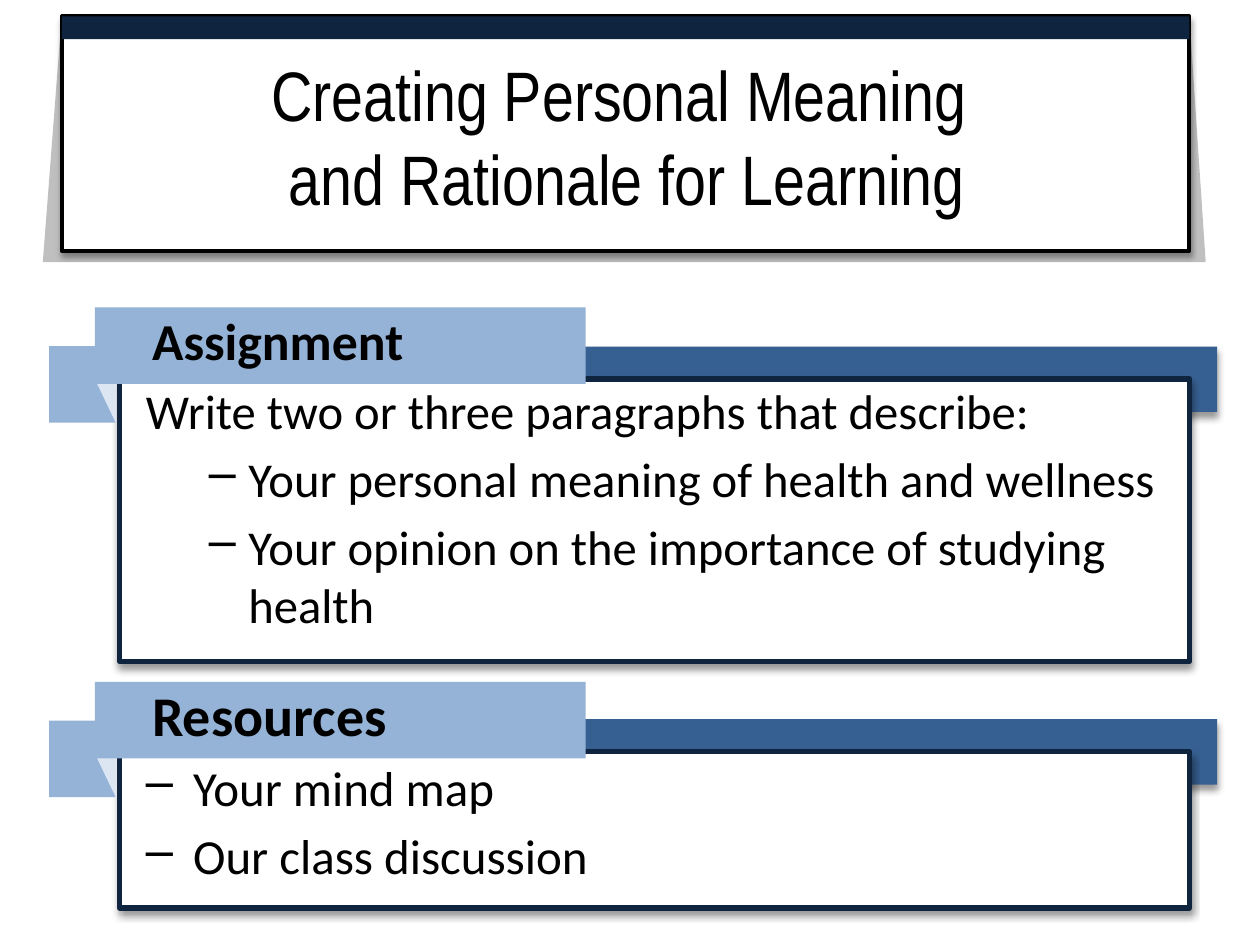
from lxml.etree import SubElement
from pptx import Presentation
from pptx.dml.color import RGBColor
from pptx.enum.shapes import MSO_SHAPE
from pptx.enum.text import MSO_ANCHOR, PP_ALIGN
from pptx.oxml.ns import qn
from pptx.util import Pt

COLORS = {
    "black": "000000", "white": "FFFFFF", "navy": "0F243E", "blue": "376092",
    "light": "95B3D7", "pale": "DCE6F2", "gray": "BFBFBF",
}
TITLE = "Creating Personal Meaning \vand Rationale for Learning"
# Paragraphs: text, size, bold, left margin, first-line indent, bullet
SECTIONS = [
    {
        "top": 175.6, "band": 198, "frame": 161.3, "box": (172.8, 600.5, 211),
        "lines": [
            ("Assignment", 29.6, True, 3.6, 0, None),
            ("Write two or three paragraphs that describe:", 27.8, False, 0, 0, None),
            ("Your personal meaning of health and wellness", 27.8, False, 58.5, -22.5, "–"),
            ("Your opinion on the importance of studying health", 27.8, False, 58.5, -22.5, "–"),
        ],
    },
    {
        "top": 389.6, "band": 411, "frame": 89.3, "box": (385.2, 540, 141),
        "lines": [
            ("Resources", 32, True, 3.6, 0, None),
            ("Your mind map", 28, False, 27, -27, "–"),
            ("Our class discussion", 28, False, 27, -27, "–"),
        ],
    },
]

deck = Presentation()
deck.slide_width, deck.slide_height = Pt(720), Pt(540)
slide = deck.slides.add_slide(deck.slide_layouts[6])
shapes = slide.shapes


def paint(shape, fill, line=None, width=0, shade=None):
    """Set fill, outline and shadow; shade is (opacity %, blur, distance)."""
    shape.shadow.inherit = False
    shape.fill.solid()
    shape.fill.fore_color.rgb = RGBColor.from_string(COLORS[fill])
    if line:
        shape.line.color.rgb = RGBColor.from_string(COLORS[line])
        shape.line.width = Pt(width)
    else:
        shape.line.fill.background()
    if shade:
        alpha, blur, dist = shade
        effects = shape.element.spPr.find(qn("a:effectLst"))
        outer = SubElement(effects, qn("a:outerShdw"), blurRad=str(Pt(blur)),
                           dist=str(Pt(dist)), dir="5400000", rotWithShape="0")
        color = SubElement(outer, qn("a:srgbClr"), val=COLORS["black"])
        SubElement(color, qn("a:alpha"), val=str(alpha * 1000))


def block(box, fill, kind=MSO_SHAPE.RECTANGLE, **style):
    shape = shapes.add_shape(kind, *map(Pt, box))
    paint(shape, fill, **style)
    return shape


def text_box(box):
    frame = shapes.add_textbox(*map(Pt, box)).text_frame
    frame.word_wrap = True
    return frame


def style_font(para, name, size, bold=False):
    for run in para.runs:
        run.font.name, run.font.size, run.font.bold = name, Pt(size), bold
        run.font.color.rgb = RGBColor.from_string(COLORS["black"])


def add_lines(frame, lines):
    for i, (text, size, bold, left, indent, mark) in enumerate(lines):
        para = frame.add_paragraph() if i else frame.paragraphs[0]
        para.text = text
        props = para._p.get_or_add_pPr()
        props.set("marL", str(Pt(left)))
        props.set("indent", str(Pt(indent)))
        if mark:
            SubElement(props, qn("a:buChar"), char=mark)
        if i:
            para.space_before = Pt(round(size * 0.2, 1))
        style_font(para, "Calibri", size, bold)


def add_ribbon(top):
    block((28.1, top + 22.2, 38.1, 43.8), "light")
    fold = block((54.2, top + 41, 12, 25), "pale", MSO_SHAPE.RIGHT_TRIANGLE)
    fold.rotation = 180
    block((54.2, top, 280.5, 43.8), "light")


soft = (40, 4, 3)
for part in SECTIONS:
    block((321.8, part["band"], 373.7, 37.4), "blue", shade=soft)
    block((68.4, part["band"] + 18.6, 611.3, part["frame"]), "white",
          line="navy", width=3, shade=soft)

wing = shapes.build_freeform(Pt(35.3), Pt(9.4))
wing.add_line_segments(
    [(Pt(x), Pt(y)) for x, y in [(679.7, 9.4), (689, 149.8), (24.5, 149.8)]])
paint(wing.convert_to_shape(), "gray")
block((35.3, 9.4, 644.4, 133.9), "white", line="black", width=2.25,
      shade=(35, 3.1, 1.8))
block((35.3, 9.4, 644.4, 13), "navy")

head = text_box((44.6, 24.5, 627.1, 105.8))
head.vertical_anchor = MSO_ANCHOR.MIDDLE
head.text = TITLE
head.paragraphs[0].alignment = PP_ALIGN.CENTER
style_font(head.paragraphs[0], "Arial Narrow", 40)

for part in SECTIONS:
    add_ribbon(part["top"])
for part in SECTIONS:
    top, width, height = part["box"]
    add_lines(text_box((76.3, top, width, height)), part["lines"])

deck.save("out.pptx")
